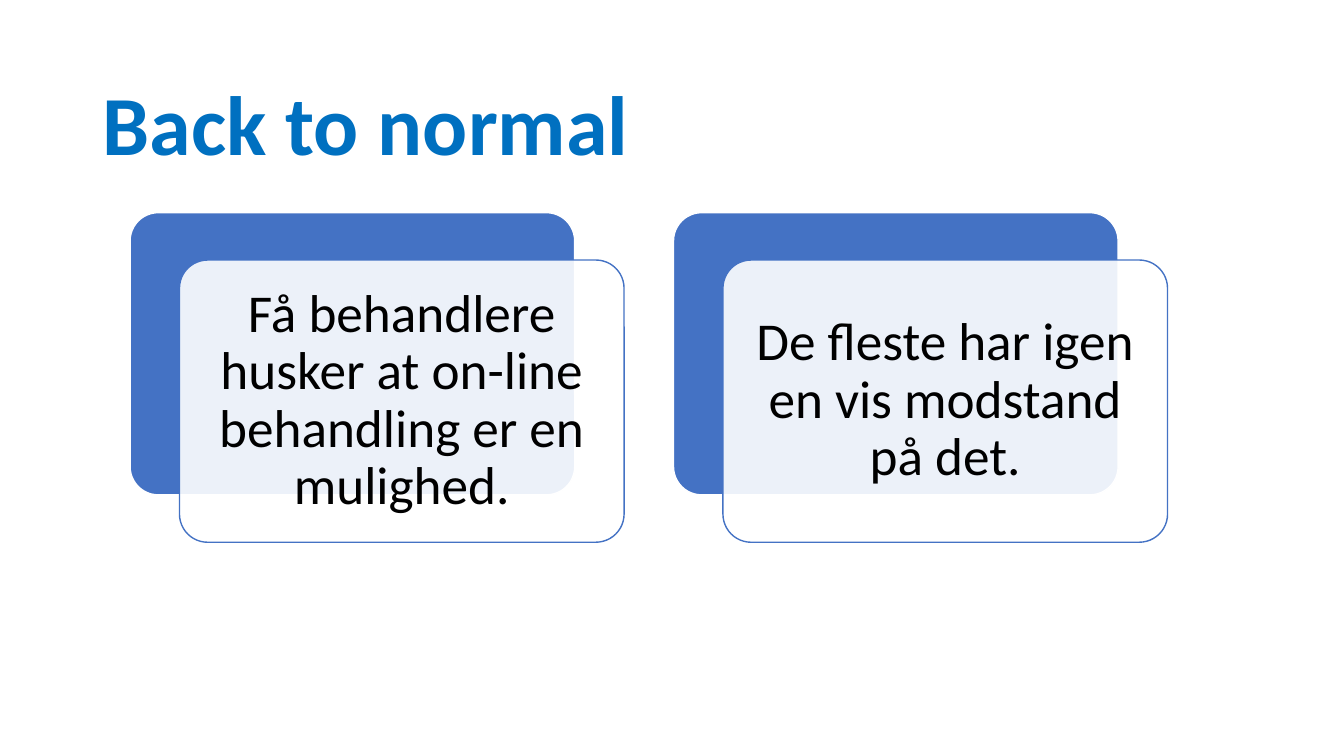
from pptx import Presentation
from pptx.dml.color import RGBColor
from pptx.enum.shapes import MSO_SHAPE
from pptx.enum.text import MSO_ANCHOR, PP_ALIGN
from pptx.oxml.ns import qn
from pptx.util import Inches, Pt
from lxml import etree

TITLE_BLUE = RGBColor(0x00, 0x70, 0xC0)
CARD_BLUE = RGBColor(0x44, 0x72, 0xC4)
WHITE = RGBColor(0xFF, 0xFF, 0xFF)
BLACK = RGBColor(0x00, 0x00, 0x00)

CARD_LEFT, CARD_TOP, CARD_PITCH = 1.29, 2.11, 5.39
CARD_WIDTH, CARD_HEIGHT = 4.41, 2.8
FRONT_SHIFT_X, FRONT_SHIFT_Y = 0.49, 0.47

MESSAGES = [
    "Få behandlere husker at on-line behandling er en mulighed.",
    "De fleste har igen en vis modstand på det.",
]


def write_text(shape, text, size, color, bold=False, align=PP_ALIGN.LEFT,
               anchor=MSO_ANCHOR.MIDDLE, margins=(0.1, 0.05)):
    """Write one paragraph; margins are horizontal and vertical inches."""
    frame = shape.text_frame
    frame.word_wrap = True
    frame.vertical_anchor = anchor
    frame.margin_left = frame.margin_right = Inches(margins[0])
    frame.margin_top = frame.margin_bottom = Inches(margins[1])
    para = frame.paragraphs[0]
    para.alignment = align
    para.line_spacing = 0.9
    span = para.add_run()
    span.text = text
    span.font.name = "Calibri"
    span.font.size = Pt(size)
    span.font.bold = bold
    span.font.color.rgb = color


def add_panel(page, left, top, fill, line, opacity=100):
    panel = page.shapes.add_shape(
        MSO_SHAPE.ROUNDED_RECTANGLE, Inches(left), Inches(top),
        Inches(CARD_WIDTH), Inches(CARD_HEIGHT))
    panel.adjustments[0] = 0.1
    panel.shadow.inherit = False
    panel.fill.solid()
    panel.fill.fore_color.rgb = fill
    panel.line.color.rgb = line
    panel.line.width = Pt(1)
    if opacity < 100:
        color = panel.fill._xPr.find(qn("a:solidFill"))[0]
        etree.SubElement(color, qn("a:alpha"), val=str(opacity * 1000))
    return panel


def add_card(page, left, top, text):
    """Place a blue panel with a translucent text panel shifted over it."""
    add_panel(page, left, top, CARD_BLUE, WHITE)
    front = add_panel(page, left + FRONT_SHIFT_X, top + FRONT_SHIFT_Y,
                      WHITE, CARD_BLUE, opacity=90)
    write_text(front, text, 38, BLACK, align=PP_ALIGN.CENTER,
               margins=(0.16, 0.16))


def add_title(page, left, top, width, height, text):
    box = page.shapes.add_textbox(
        Inches(left), Inches(top), Inches(width), Inches(height))
    write_text(box, text, 60, TITLE_BLUE, bold=True, anchor=MSO_ANCHOR.BOTTOM)


def main():
    deck = Presentation()
    deck.slide_width, deck.slide_height = Inches(13.33), Inches(7.5)
    page = deck.slides.add_slide(deck.slide_layouts[6])
    add_title(page, 0.92, 0.13, 11.5, 1.64, "Back to normal")
    for column, message in enumerate(MESSAGES):
        add_card(page, CARD_LEFT + column * CARD_PITCH, CARD_TOP, message)
    deck.save("out.pptx")


if __name__ == "__main__":
    main()
